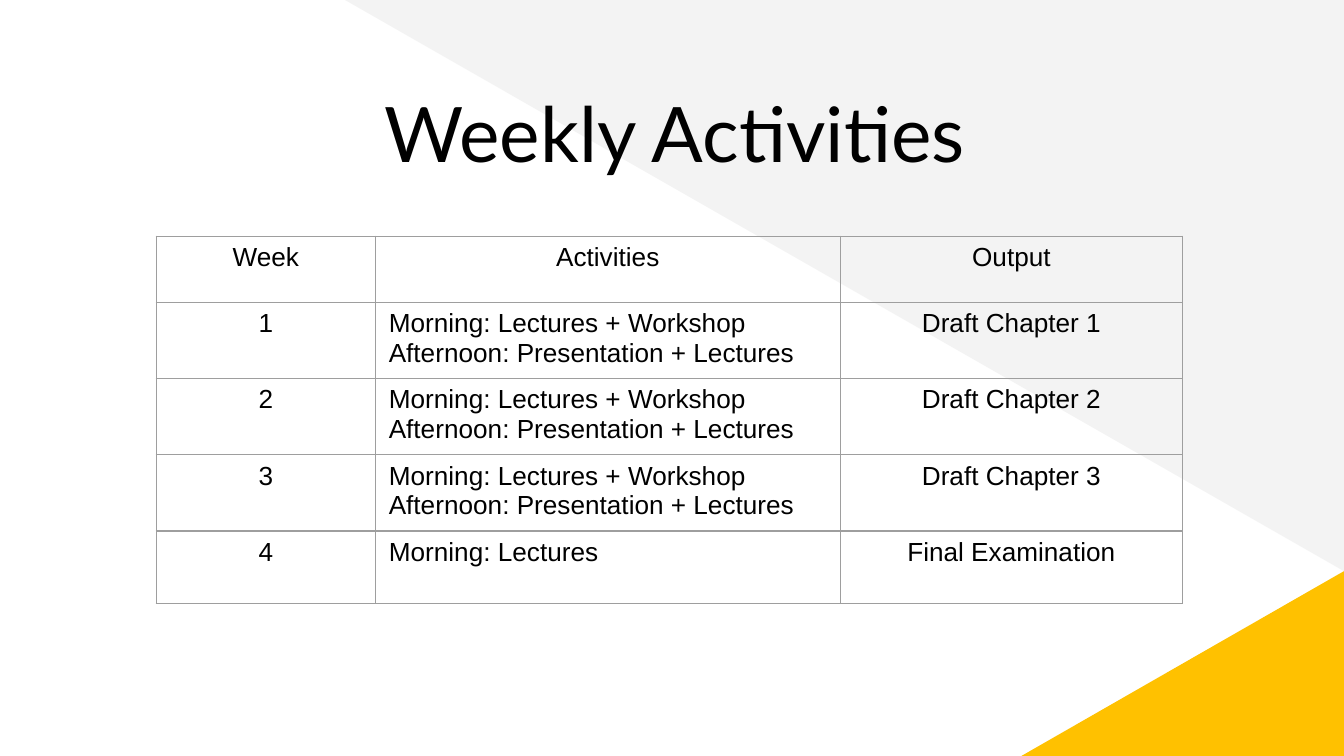
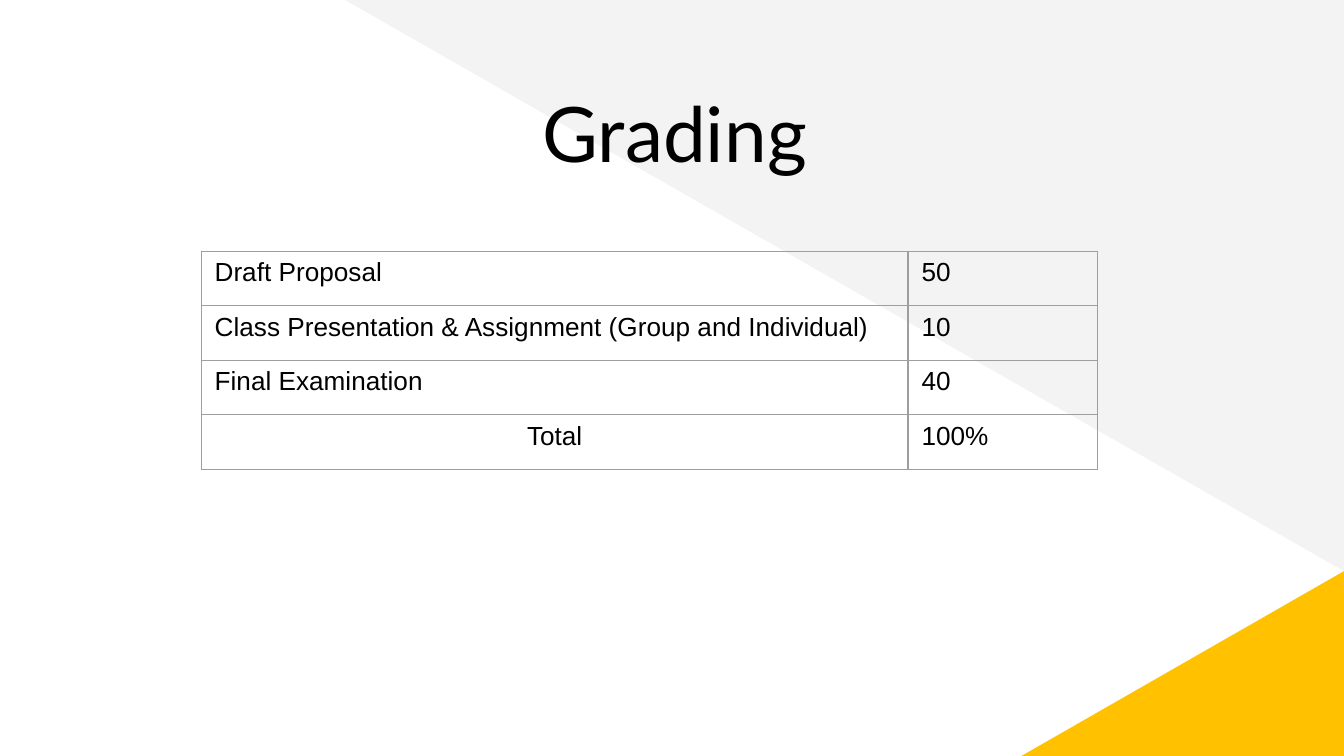
from lxml import etree
from pptx import Presentation
from pptx.dml.color import RGBColor
from pptx.enum.shapes import MSO_SHAPE
from pptx.enum.text import MSO_ANCHOR, PP_ALIGN
from pptx.oxml.ns import qn
from pptx.util import Pt

TRIANGLE = MSO_SHAPE.RIGHT_TRIANGLE
TOP = MSO_ANCHOR.TOP
LEFT, CENTER = PP_ALIGN.LEFT, PP_ALIGN.CENTER

BLACK = RGBColor(0x00, 0x00, 0x00)
PALE_GRAY = RGBColor(0xF3, 0xF3, 0xF3)
YELLOW = RGBColor(0xFF, 0xC1, 0x00)
GRID_GRAY = RGBColor(0x9E, 0x9E, 0x9E)
TITLE_FONT, TITLE_SIZE = "Lato", 41
BODY_FONT, BODY_SIZE = "Arial", 14

SLIDE_WIDTH, SLIDE_HEIGHT = 720, 405
BLANK_LAYOUT = 6
INSET = 7.2
GRID_WIDTH = 0.75

FULL_DAY = "Morning: Lectures + Workshop Afternoon: Presentation + Lectures"
WEEKS = [
    ("Week", "Activities", "Output"),
    *((str(week), FULL_DAY, f"Draft Chapter {week}") for week in range(1, 4)),
    ("4", "Morning: Lectures", "Final Examination"),
]
GRADES = [
    ("Draft Proposal", "50"),
    ("Class Presentation & Assignment (Group and Individual)", "10"),
    ("Final Examination", "40"),
    ("Total", "100%"),
]


def add_corner(slide, left, top, width, height, color):
    """Add a plain right triangle and return it."""
    corner = slide.shapes.add_shape(TRIANGLE, Pt(left), Pt(top), Pt(width), Pt(height))
    corner.shadow.inherit = False
    corner.fill.solid()
    corner.fill.fore_color.rgb = color
    corner.line.fill.background()
    return corner


def write(frame, text, font, size, align):
    """Write one run of black text into the first paragraph of a frame."""
    paragraph = frame.paragraphs[0]
    paragraph.alignment = align
    run = paragraph.add_run()
    run.text = text
    run.font.name = font
    run.font.size = Pt(size)
    run.font.color.rgb = BLACK


def add_title(slide, text):
    """Add the centred slide title."""
    title = slide.shapes.add_textbox(Pt(42.5), Pt(38.9), Pt(638), Pt(45.4))
    frame = title.text_frame
    frame.word_wrap = True
    frame.vertical_anchor = TOP
    frame.margin_left = frame.margin_right = Pt(INSET)
    frame.margin_top = frame.margin_bottom = Pt(INSET)
    write(frame, text, TITLE_FONT, TITLE_SIZE, CENTER)


def add_themed_slide(deck, title):
    """Add a slide with the two corner triangles and a title."""
    slide = deck.slides.add_slide(deck.slide_layouts[BLANK_LAYOUT])
    upper = add_corner(slide, 183.6, -0.7, 536.4, 306.7, PALE_GRAY)
    upper.rotation = 180
    lower = add_corner(slide, 547.2, 306, 172.8, 99, YELLOW)
    lower.element.spPr.find(qn("a:xfrm")).set("flipH", "1")
    add_title(slide, title)
    return slide


def outline_cell(cell):
    """Draw the thin gray grid line on all four sides of a cell."""
    properties = cell._tc.get_or_add_tcPr()
    for side in ("a:lnL", "a:lnR", "a:lnT", "a:lnB"):
        line = etree.SubElement(properties, qn(side), w=str(Pt(GRID_WIDTH)))
        fill = etree.SubElement(line, qn("a:solidFill"))
        etree.SubElement(fill, qn("a:srgbClr"), val=str(GRID_GRAY))


def add_grid(slide, left, top, widths, heights, rows, align_of):
    """Add an unfilled table; align_of gives the alignment at (row, column)."""
    table = slide.shapes.add_table(
        len(rows), len(widths), Pt(left), Pt(top), Pt(sum(widths)), Pt(sum(heights))
    ).table
    table.first_row = table.horz_banding = False
    for column, width in zip(table.columns, widths):
        column.width = Pt(width)
    for row, height in zip(table.rows, heights):
        row.height = Pt(height)
    for r, texts in enumerate(rows):
        for c, text in enumerate(texts):
            cell = table.cell(r, c)
            outline_cell(cell)
            cell.fill.background()
            write(cell.text_frame, text, BODY_FONT, BODY_SIZE, align_of(r, c))


def align_week(row, column):
    """Centre everything but the descriptions of activities."""
    return LEFT if row and column == 1 else CENTER


def align_grade(row, column):
    """Centre only the label of the total."""
    return CENTER if (row, column) == (len(GRADES) - 1, 0) else LEFT


def main():
    """Build and save the two slides."""
    deck = Presentation()
    deck.slide_width, deck.slide_height = Pt(SLIDE_WIDTH), Pt(SLIDE_HEIGHT)

    activities = add_themed_slide(deck, "Weekly Activities")
    week_heights = [35.3] + [38.7] * 4
    add_grid(activities, 83.7, 126.6, [117.4, 249.1, 183.4], week_heights, WEEKS, align_week)

    grading = add_themed_slide(deck, "Grading")
    grade_heights = [29.2] * len(GRADES)
    add_grid(grading, 107.8, 134.6, [378.7, 101.5], grade_heights, GRADES, align_grade)

    deck.save("out.pptx")


if __name__ == "__main__":
    main()
